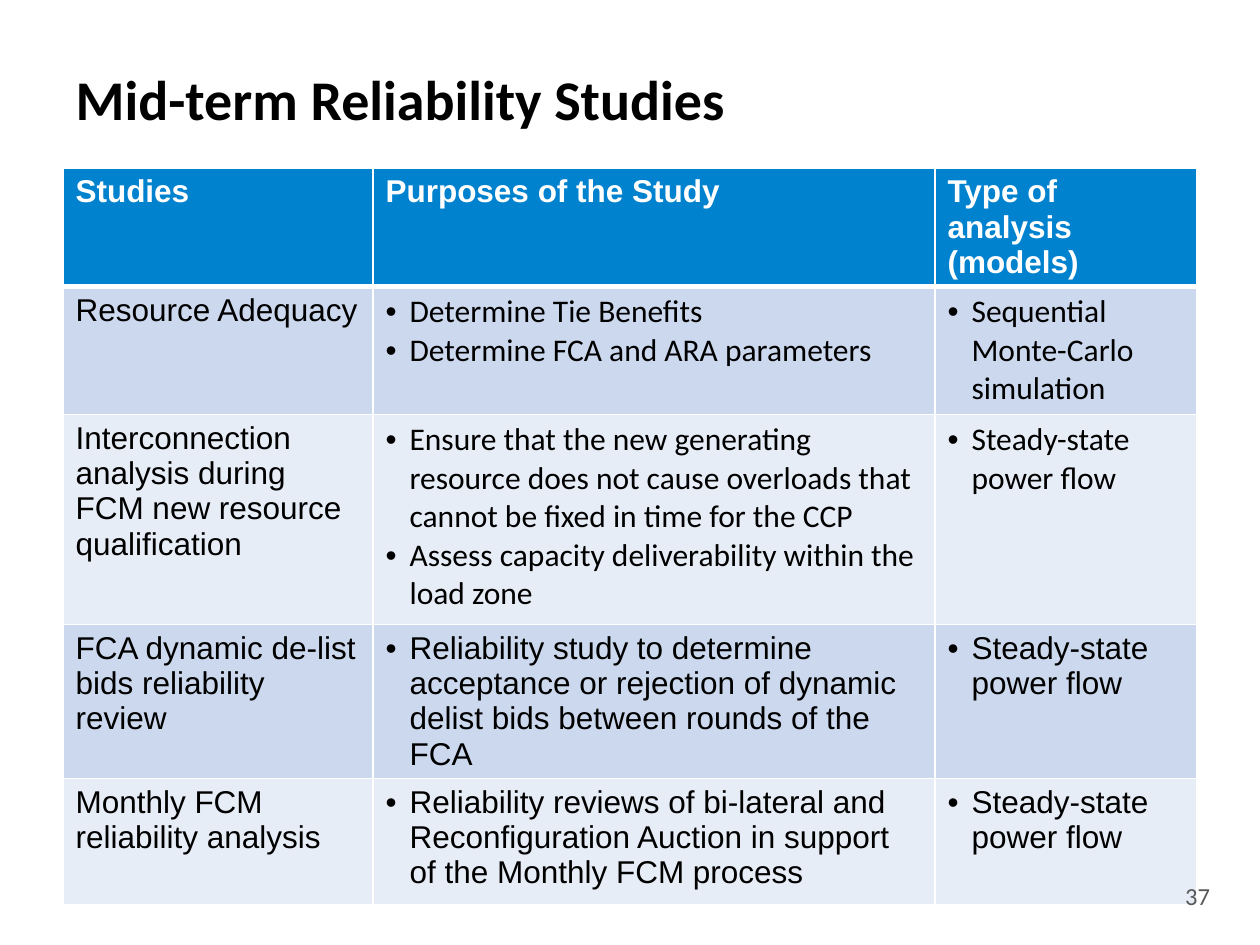
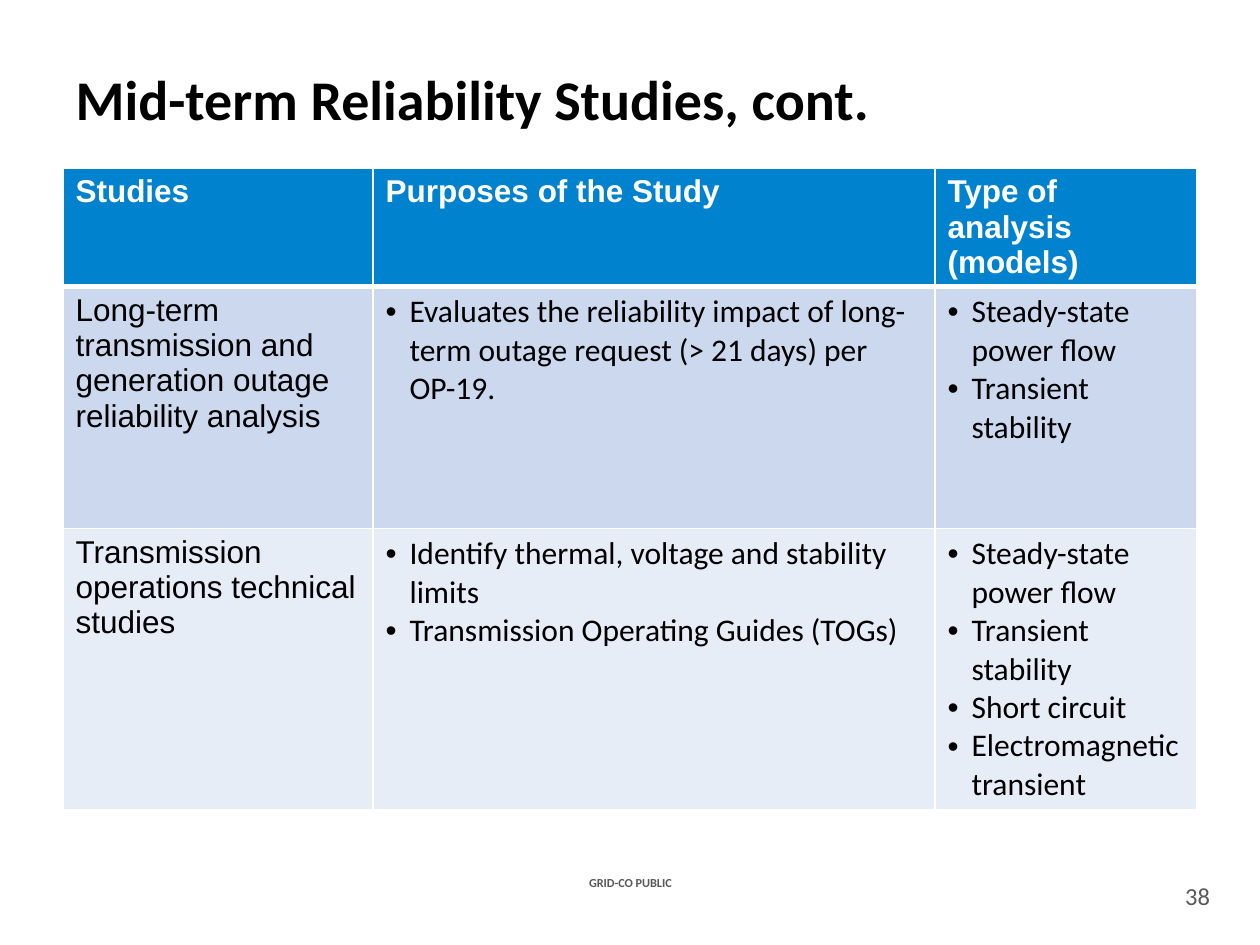
from pptx import Presentation
from pptx.dml.color import RGBColor
from pptx.enum.text import MSO_ANCHOR as Anchor, PP_ALIGN as Align
from pptx.oxml import parse_xml
from pptx.oxml.ns import nsdecls
from pptx.util import Pt

PX = 7257.14  # EMU in one px, 126 px to the inch
WIDE, HIGH = 1260, 945
BLACK, WHITE, GREY = "000000", "FFFFFF", "595959"
BLUE, BANDS = "0082CF", ("CCD8ED", "E7EDF6")
SANS, BODY = "Arial", "Calibri"

TITLE_BOX = (63, 38, 1134, 120)
TABLE_BOX = (63, 168, 1134)
FOOT_BOX = (538, 872, 185, 21)
NUM_BOX = (1176, 877, 43, 37)

COLS = (310, 562, 262)
HEAD_ROW = 118
INDENT = 24
HEADS = (["Studies"], ["Purposes of the Study"], ["Type of analysis", "(models)"])
FLOW = "Steady-state power flow"
STABLE = "Transient stability"

# Each row: height, font of its bullets, study, purposes, models
MID = [
    (128, BODY, "Resource Adequacy",
     ["Determine Tie Benefits", "Determine FCA and ARA parameters"],
     ["Sequential Monte-Carlo simulation"]),
    (210, BODY, "Interconnection analysis during FCM new resource qualification",
     ["Ensure that the new generating resource does not cause overloads "
      "that cannot be fixed in time for the CCP",
      "Assess capacity deliverability within the load zone"], [FLOW]),
    (154, SANS, "FCA dynamic de-list bids reliability review",
     ["Reliability study to determine acceptance or rejection of dynamic "
      "delist bids between rounds of the FCA"], [FLOW]),
    (126, SANS, "Monthly FCM reliability analysis",
     ["Reliability reviews of bi-lateral and Reconfiguration Auction "
      "in support of the Monthly FCM process"], [FLOW]),
]
CONT = [
    (242, BODY, "Long-term transmission and generation outage reliability analysis",
     ["Evaluates the reliability impact of long-term outage request "
      "(> 21 days) per OP-19."], [FLOW, STABLE]),
    (281, BODY, "Transmission operations technical studies",
     ["Identify thermal, voltage and stability limits",
      "Transmission Operating Guides (TOGs)"],
     [FLOW, STABLE, "Short circuit", "Electromagnetic transient"]),
]


def px(n):
    return round(n * PX)


def color(code):
    return RGBColor.from_string(code)


def add_run(para, text, size, font, code, bold=False):
    run = para.add_run()
    run.text = text
    face = run.font
    face.size, face.name, face.bold = Pt(size), font, bold
    face.color.rgb = color(code)


def add_bullet(para):
    props = para._p.get_or_add_pPr()
    props.set("marL", str(px(INDENT)))
    props.set("indent", str(-px(INDENT)))
    props.append(parse_xml(f'<a:buFont {nsdecls("a")} typeface="Arial"/>'))
    props.append(parse_xml(f'<a:buChar {nsdecls("a")} char="•"/>'))


def set_edges(cell, base):
    for side, width in (("L", 1), ("R", 1), ("T", 1), ("B", base)):
        cell._tc.get_or_add_tcPr().append(parse_xml(
            f'<a:ln{side} {nsdecls("a")} w="{Pt(width)}"><a:solidFill>'
            f'<a:srgbClr val="{WHITE}"/></a:solidFill></a:ln{side}>'))


def fill_cell(cell, lines, fill, font, code=BLACK, head=False, bullet=False):
    set_edges(cell, 3 if head else 1)
    cell.fill.solid()
    cell.fill.fore_color.rgb = color(fill)
    frame = cell.text_frame
    for i, line in enumerate(lines):
        para = frame.add_paragraph() if i else frame.paragraphs[0]
        if bullet:
            add_bullet(para)
        add_run(para, line, 18, font, code, head)


def add_title(slide, box, text):
    title = slide.shapes.title
    title.left, title.top, title.width, title.height = map(px, box)
    frame = title.text_frame
    frame.word_wrap, frame.vertical_anchor = True, Anchor.MIDDLE
    para = frame.paragraphs[0]
    para.alignment = Align.LEFT
    add_run(para, text, 32, BODY, BLACK, True)


def add_label(slide, box, text, size, bold=False):
    frame = slide.shapes.add_textbox(*map(px, box)).text_frame
    frame.word_wrap, frame.vertical_anchor = True, Anchor.MIDDLE
    frame.margin_left = frame.margin_right = 0
    frame.margin_top = frame.margin_bottom = 0
    para = frame.paragraphs[0]
    para.alignment = Align.CENTER
    add_run(para, text, size, BODY, GREY, bold)


def add_studies(slide, box, rows):
    highs = [HEAD_ROW] + [row[0] for row in rows]
    grid = slide.shapes.add_table(
        len(highs), len(COLS), *map(px, (*box, sum(highs)))).table
    for col, wide in zip(grid.columns, COLS):
        col.width = px(wide)
    for row, high in zip(grid.rows, highs):
        row.height = px(high)
    # Header
    for c, lines in enumerate(HEADS):
        fill_cell(grid.cell(0, c), lines, BLUE, SANS, WHITE, head=True)
    # Banded body
    for r, (_, font, study, aims, models) in enumerate(rows, 1):
        band = BANDS[(r - 1) % 2]
        fill_cell(grid.cell(r, 0), [study], band, SANS)
        for c, lines in enumerate((aims, models), 1):
            fill_cell(grid.cell(r, c), lines, band, font, bullet=True)


def add_page(deck, title, rows, number, foot=None):
    slide = deck.slides.add_slide(deck.slide_layouts[5])
    add_title(slide, TITLE_BOX, title)
    add_studies(slide, TABLE_BOX, rows)
    if foot:
        add_label(slide, FOOT_BOX, foot, 7, True)
    add_label(slide, NUM_BOX, str(number), 14)


def main():
    deck = Presentation()
    deck.slide_width, deck.slide_height = px(WIDE), px(HIGH)
    add_page(deck, "Mid-term Reliability Studies", MID, 37)
    add_page(deck, "Mid-term Reliability Studies, cont.", CONT, 38, "GRID-CO PUBLIC")
    deck.save("out.pptx")


if __name__ == "__main__":
    main()
